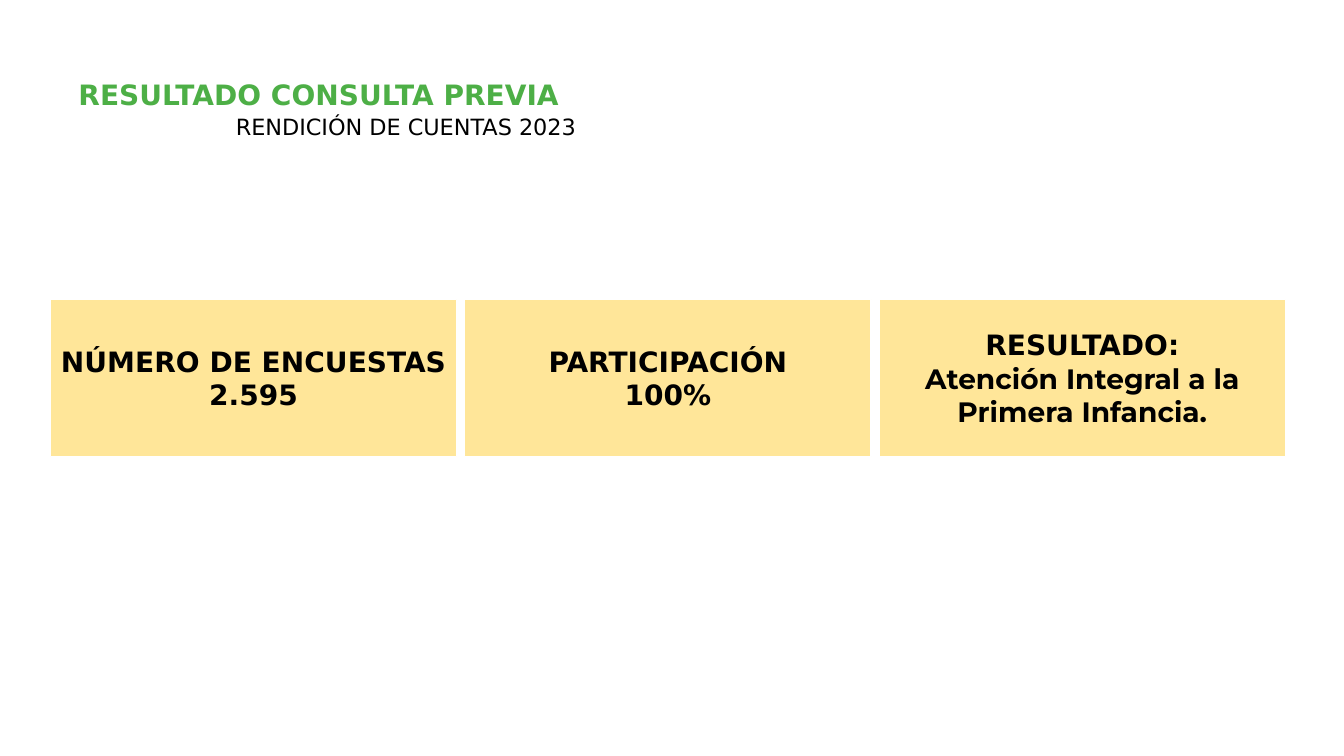
"""Build the slide with the results of the prior consultation."""
from dataclasses import dataclass

import pptx
import pptx.dml.color
import pptx.enum.shapes
import pptx.enum.text
import pptx.util
from pptx.util import Inches

GREEN = pptx.dml.color.RGBColor(0x4D, 0xAF, 0x46)
BLACK = pptx.dml.color.RGBColor(0x00, 0x00, 0x00)
CREAM = pptx.dml.color.RGBColor(0xFF, 0xE6, 0x99)
WHITE = pptx.dml.color.RGBColor(0xFF, 0xFF, 0xFF)
SANS = "DejaVu Sans"
LEFT, TOP, WIDTH, HEIGHT, STEP = 0.5, 2.97, 4.03, 1.56, 4.11


@dataclass
class Card:
    label: str
    value: str
    font: str = SANS


CARDS = [
    Card("NÚMERO DE ENCUESTAS", "2.595"),
    Card("PARTICIPACIÓN", "100%"),
    Card("RESULTADO:", "Atención Integral a la Primera Infancia.", "Montserrat"),
]


def write(para, text: str, *, size: int = 20, bold: bool = True, color=BLACK,
          font: str = SANS, align=pptx.enum.text.PP_ALIGN.LEFT, line=None) -> None:
    para.alignment = align
    if line:
        para.line_spacing = pptx.util.Pt(line)
    run = para.add_run()
    run.text = text
    run.font.name = font
    run.font.size = pptx.util.Pt(size)
    run.font.bold = bold
    run.font.color.rgb = color


def add_head(slide, text: str, left: float, top: float, width: float,
             height: float, **style) -> None:
    box = slide.shapes.add_textbox(
        Inches(left), Inches(top), Inches(width), Inches(height))
    frame = box.text_frame
    frame.word_wrap = True
    frame.auto_size = pptx.enum.text.MSO_AUTO_SIZE.SHAPE_TO_FIT_TEXT
    write(frame.paragraphs[0], text, **style)


def add_card(slide, card: Card, left: float) -> None:
    shape = slide.shapes.add_shape(
        pptx.enum.shapes.MSO_SHAPE.RECTANGLE,
        Inches(left), Inches(TOP), Inches(WIDTH), Inches(HEIGHT))
    shape.shadow.inherit = False
    shape.fill.solid()
    shape.fill.fore_color.rgb = CREAM
    shape.line.color.rgb = WHITE
    shape.line.width = pptx.util.Pt(1)
    frame = shape.text_frame
    frame.word_wrap = True
    frame.vertical_anchor = pptx.enum.text.MSO_ANCHOR.MIDDLE
    center = pptx.enum.text.PP_ALIGN.CENTER
    write(frame.paragraphs[0], card.label, align=center)
    write(frame.add_paragraph(), card.value, font=card.font, align=center)


def main() -> None:
    deck = pptx.Presentation()
    deck.slide_width, deck.slide_height = Inches(13.33), Inches(7.5)
    slide = deck.slides.add_slide(deck.slide_layouts[6])
    add_head(slide, "RESULTADO CONSULTA PREVIA", 0.68, 0.72, 7.27, 0.44, color=GREEN)
    add_head(slide, "RENDICIÓN DE CUENTAS 2023", 2.24, 1.01, 8.2, 0.4,
             size=16, bold=False, line=23.4)
    for index, card in enumerate(CARDS):
        add_card(slide, card, LEFT + index * STEP)
    deck.save("out.pptx")


if __name__ == "__main__":
    main()
